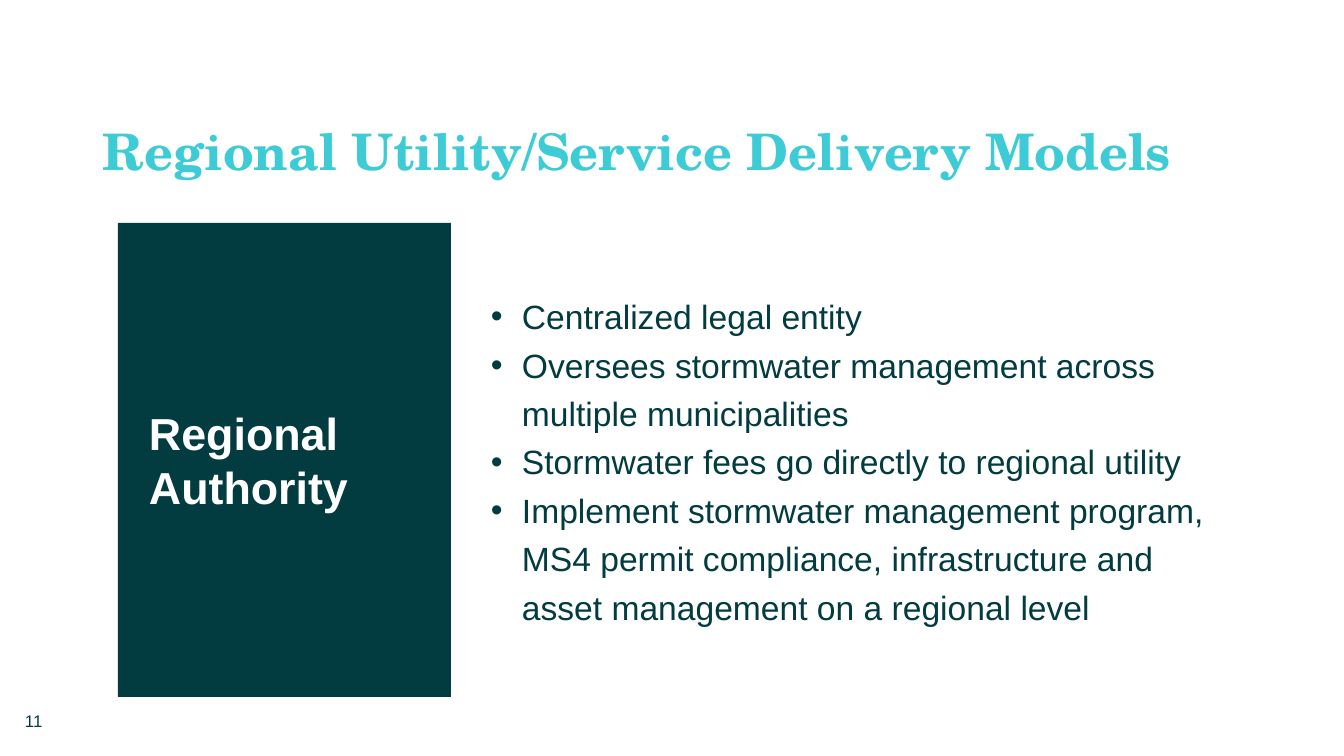
import pptx
import pptx.util
import pptx.dml.color
import pptx.enum.shapes
import pptx.enum.text
from dataclasses import dataclass
from lxml import etree

TITLE = "Regional Utility/Service Delivery Models"
MODEL = "Regional Authority"
FEATURES = [
    "Centralized legal entity",
    "Oversees stormwater management across multiple municipalities",
    "Stormwater fees go directly to regional utility",
    "Implement stormwater management program, MS4 permit compliance, "
    "infrastructure and asset management on a regional level",
]
PAGE_NUMBER = "11"


@dataclass(frozen=True)
class Theme:
    heading_font: str = "TeX Gyre Schola"
    body_font: str = "Arial"
    teal: str = "3DCCD5"
    dark: str = "023B40"
    white: str = "FFFFFF"
    title_size: int = 36
    label_size: int = 32
    body_size: int = 24
    number_size: int = 12


THEME = Theme()
PAGE_WIDTH, PAGE_HEIGHT = 1344, 756
EMU_PER_PX = 12192000 / PAGE_WIDTH

PANEL_LEFT, PANEL_TOP, PANEL_WIDTH, PANEL_HEIGHT = 118, 223, 1109, 474
LABEL_WIDTH = 333
TEXT_GAP = 40
BULLET_INDENT = 31


def px(length):
    return pptx.util.Emu(round(length * EMU_PER_PX))


def rgb(color):
    return pptx.dml.color.RGBColor.from_string(color)


def place(shape, left, top, width, height):
    shape.left, shape.top = px(left), px(top)
    shape.width, shape.height = px(width), px(height)


def write(shape, lines, size, color, font=THEME.body_font, bold=False,
          spacing=None, anchor=pptx.enum.text.MSO_ANCHOR.MIDDLE, insets=(10, 5, 10, 5)):
    """Fill a shape with left-aligned paragraphs; insets run left, top, right, bottom."""
    frame = shape.text_frame
    frame.text = "\n".join(lines)
    frame.word_wrap = True
    frame.auto_size = pptx.enum.text.MSO_AUTO_SIZE.NONE
    frame.vertical_anchor = anchor
    frame.margin_left, frame.margin_top, frame.margin_right, frame.margin_bottom = map(px, insets)
    for para in frame.paragraphs:
        para.alignment = pptx.enum.text.PP_ALIGN.LEFT
        para.line_spacing = spacing
        for span in para.runs:
            span.font.name = font
            span.font.size = pptx.util.Pt(size)
            span.font.bold = bold
            span.font.color.rgb = rgb(color)


def add_bullets(shape):
    for para in shape.text_frame.paragraphs:
        properties = para._p.get_or_add_pPr()
        properties.set("marL", str(px(BULLET_INDENT)))
        properties.set("indent", str(-px(BULLET_INDENT)))
        namespace = properties.nsmap["a"]
        etree.SubElement(properties, f"{{{namespace}}}buFont", typeface=THEME.body_font)
        etree.SubElement(properties, f"{{{namespace}}}buChar", char="•")


def add_panel(shapes, width, fill):
    panel = shapes.add_shape(pptx.enum.shapes.MSO_SHAPE.RECTANGLE, 0, 0, 0, 0)
    place(panel, PANEL_LEFT, PANEL_TOP, width, PANEL_HEIGHT)
    panel.shadow.inherit = False
    panel.fill.solid()
    panel.fill.fore_color.rgb = rgb(fill)
    panel.line.fill.background()
    return panel


def main():
    deck = pptx.Presentation()
    deck.slide_width, deck.slide_height = px(PAGE_WIDTH), px(PAGE_HEIGHT)
    page = deck.slides.add_slide(deck.slide_layouts[5])

    title = page.shapes.title
    place(title, 93, 40, 1159, 146)
    write(title, [TITLE], THEME.title_size, THEME.teal, THEME.heading_font, bold=True,
          spacing=0.9, anchor=pptx.enum.text.MSO_ANCHOR.BOTTOM)

    number = page.shapes.add_textbox(0, 0, 0, 0)
    place(number, 15, 701, 302, 40)
    write(number, [PAGE_NUMBER], THEME.number_size, THEME.dark)

    model = page.shapes.add_group_shape()
    features = add_panel(model.shapes, PANEL_WIDTH, THEME.white)
    write(features, FEATURES, THEME.body_size, THEME.dark, spacing=1.2,
          insets=(LABEL_WIDTH + TEXT_GAP, 0, 20, 5))
    add_bullets(features)

    label = add_panel(model.shapes, LABEL_WIDTH, THEME.dark)
    write(label, [MODEL], THEME.label_size, THEME.white, bold=True, insets=(31, 5, 10, 5))

    deck.save("out.pptx")


if __name__ == "__main__":
    main()
